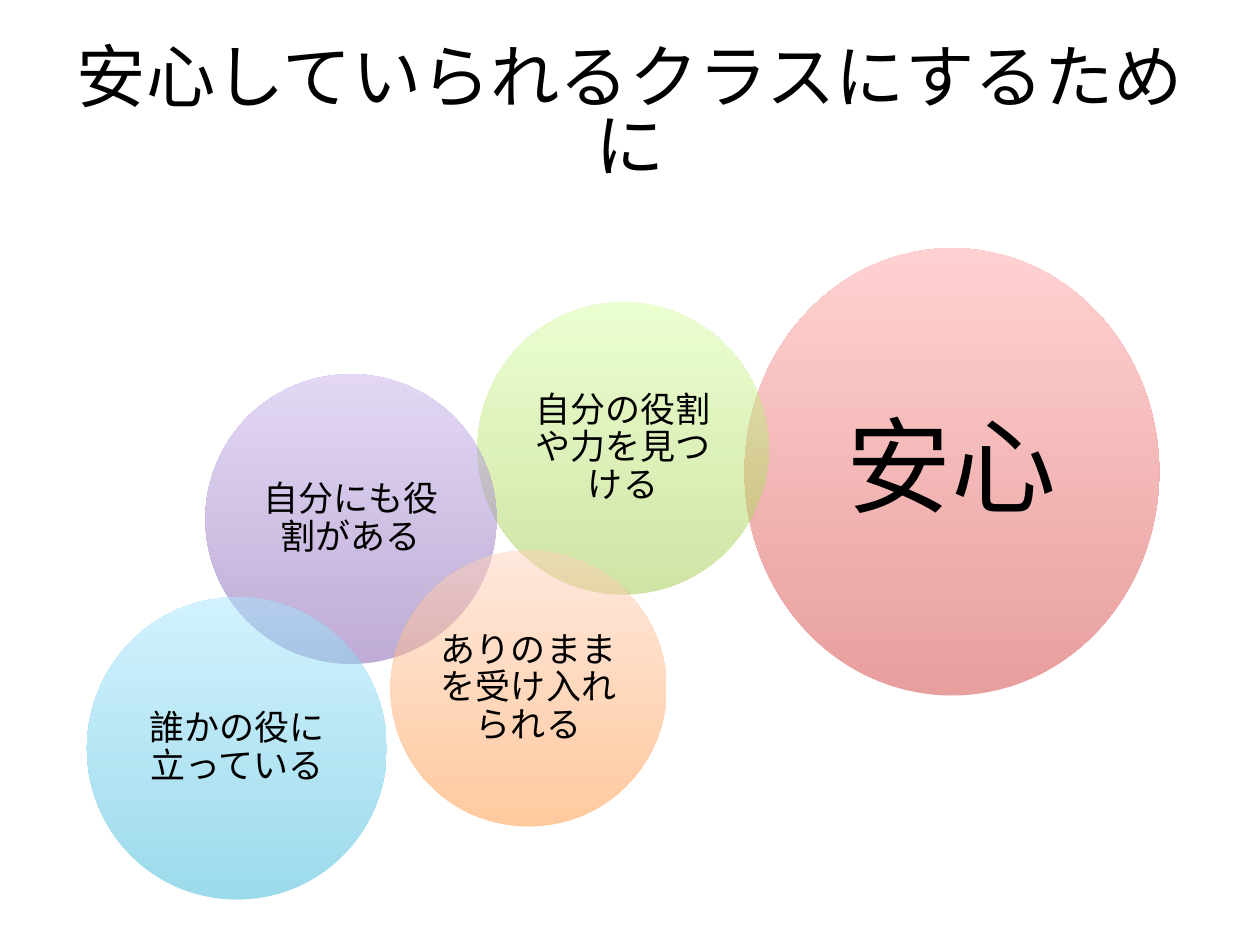
from dataclasses import dataclass

import pptx
import pptx.util
import pptx.dml.color
import pptx.enum.shapes
import pptx.enum.text
import pptx.oxml.ns
from lxml import etree

Inches = pptx.util.Inches
Pt = pptx.util.Pt
RGB = pptx.dml.color.RGBColor.from_string
qn = pptx.oxml.ns.qn


@dataclass(frozen=True)
class Theme:
    font: str = "Calibri"
    text: str = "000000"
    title: float = 39.6
    goal: float = 60
    step: float = 20
    opacity: int = 50
    red: tuple = ("D1403C", "FFA6A5")
    green: tuple = ("A0CA4A", "DAFFA5")
    purple: tuple = ("7F5BAB", "C8B0ED")
    blue: tuple = ("39B7D8", "A7E6FF")
    orange: tuple = ("FF953E", "FFD2BD")


THEME = Theme()


def write_text(sp, text, size, spacing):
    tf = sp.text_frame
    tf.word_wrap = True
    tf.vertical_anchor = pptx.enum.text.MSO_ANCHOR.MIDDLE
    p = tf.paragraphs[0]
    p.text = text
    p.alignment = pptx.enum.text.PP_ALIGN.CENTER
    p.line_spacing = spacing
    p.font.name = THEME.font
    p.font.size = Pt(size)
    p.font.color.rgb = RGB(THEME.text)
    return tf


def add_title(slide, box, text):
    sp = slide.shapes.add_textbox(*map(Inches, box))
    write_text(sp, text, THEME.title, 0.83)


def add_circle(slide, box, text, colors, size, inset):
    sp = slide.shapes.add_shape(
        pptx.enum.shapes.MSO_SHAPE.OVAL, *map(Inches, box))
    sp.shadow.inherit = False
    sp.line.fill.background()
    sp.fill.gradient()
    sp.fill.gradient_angle = 90
    for stop, color in zip(sp.fill.gradient_stops, colors):
        stop.color.rgb = RGB(color)
    for clr in sp._element.spPr.iter(qn("a:srgbClr")):
        etree.SubElement(clr, qn("a:alpha"), val=str(THEME.opacity * 1000))
    tf = write_text(sp, text, size, 0.9)
    tf.margin_left = tf.margin_right = Inches(inset)
    tf.margin_top = tf.margin_bottom = Inches(inset)


def add_steps(slide, left, top):
    steps = [
        ((3.1, 0.43, 2.31, 2.32), "自分の役割や力を見つける", THEME.green),
        ((0.94, 1, 2.31, 2.3), "自分にも役割がある", THEME.purple),
        ((0, 2.77, 2.38, 2.4), "誰かの役に立っている", THEME.blue),
        ((2.41, 2.4, 2.19, 2.19), "ありのままを受け入れられる", THEME.orange),
    ]
    for (x, y, w, h), text, colors in steps:
        add_circle(slide, (left + x, top + y, w, h), text, colors,
                   THEME.step, 0.03)


def main():
    prs = pptx.Presentation()
    prs.slide_width, prs.slide_height = Inches(10), Inches(7.5)
    slide = prs.slides.add_slide(prs.slide_layouts[6])
    add_title(slide, (0.5, 0.3, 9, 1.25), "安心していられるクラスにするために")
    add_circle(slide, (5.91, 1.97, 3.29, 3.55), "安心", THEME.red,
               THEME.goal, 0.08)
    add_steps(slide, 0.69, 1.97)
    prs.save("out.pptx")


if __name__ == "__main__":
    main()
